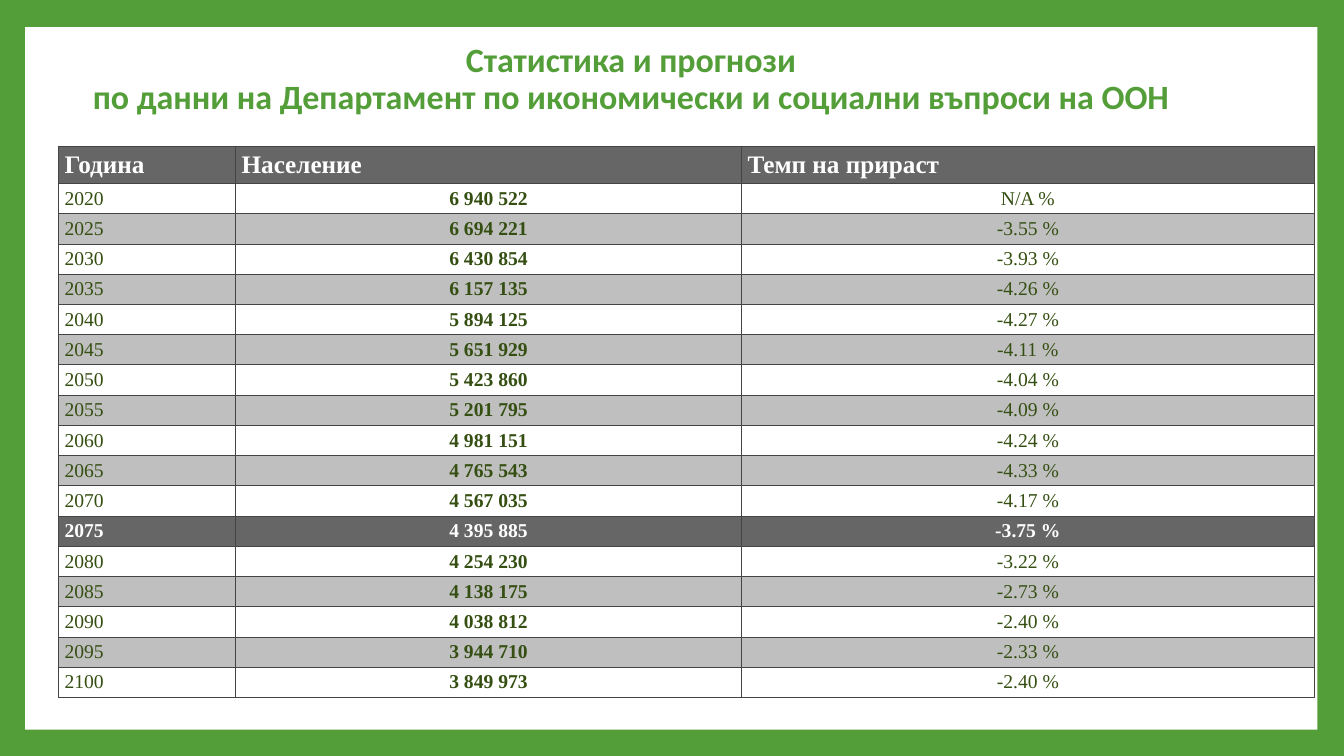
"""Build a slide with a table of population forecasts."""
from dataclasses import dataclass

from lxml import etree
from pptx import Presentation
from pptx.dml.color import RGBColor
from pptx.enum import shapes, text
from pptx.oxml import ns
from pptx.util import Pt


@dataclass(frozen=True)
class Theme:
    green: str = "549E39"
    white: str = "FFFFFF"
    dark: str = "666666"
    band: str = "BFBFBF"
    ink: str = "354F12"
    rule: str = "444444"
    sans: str = "Calibri"
    serif: str = "Times New Roman"
    title: float = 24.3
    head: float = 18
    body: float = 14
    line: float = 0.6


@dataclass(frozen=True)
class Box:
    left: float
    top: float
    width: float
    height: float


@dataclass(frozen=True)
class Look:
    size: float
    color: str
    fill: str
    bold: tuple[bool, ...]
    center: tuple[bool, ...]


@dataclass(frozen=True)
class Row:
    year: str
    people: str
    rate: str


THEME = Theme()
PANEL = Box(18, 19.4, 923, 501.8)
TITLE = Box(41.8, 23.8, 817.9, 60.5)
GRID = Box(41.8, 104.2, 897, 394.4)
COLS = (126.5, 361.4, 409.1)
HEAD_H, ROW_H = 26.8, 21.62
HEADING = "Статистика и прогнози\vпо данни на Департамент по икономически и социални въпроси на ООН"
HEAD = Row("Година", "Население", "Темп на прираст")
PEAK = "2075"
DATA = (
    ("6 940 522", "N/A %"), ("6 694 221", "-3.55 %"), ("6 430 854", "-3.93 %"),
    ("6 157 135", "-4.26 %"), ("5 894 125", "-4.27 %"), ("5 651 929", "-4.11 %"),
    ("5 423 860", "-4.04 %"), ("5 201 795", "-4.09 %"), ("4 981 151", "-4.24 %"),
    ("4 765 543", "-4.33 %"), ("4 567 035", "-4.17 %"), ("4 395 885", "-3.75 %"),
    ("4 254 230", "-3.22 %"), ("4 138 175", "-2.73 %"), ("4 038 812", "-2.40 %"),
    ("3 944 710", "-2.33 %"), ("3 849 973", "-2.40 %"),
)
ROWS = tuple(Row(str(2020 + 5 * i), *pair) for i, pair in enumerate(DATA))

MID = (False, True, True)
TOP_LOOK = Look(THEME.head, THEME.white, THEME.dark, (True,) * 3, (False,) * 3)
PEAK_LOOK = Look(THEME.body, THEME.white, THEME.dark, (True,) * 3, MID)
PLAIN, BAND = (
    Look(THEME.body, THEME.ink, fill, (False, True, False), MID)
    for fill in (THEME.white, THEME.band)
)


def paint(fill, color: str) -> None:
    """Fill with one solid colour."""
    fill.solid()
    fill.fore_color.rgb = RGBColor.from_string(color)


def style(para, name: str, size: float, color: str, bold: bool, center: bool) -> None:
    """Set the font and alignment of a paragraph."""
    font = para.font
    font.name, font.size, font.bold = name, Pt(size), bold
    font.color.rgb = RGBColor.from_string(color)
    para.alignment = text.PP_ALIGN.CENTER if center else text.PP_ALIGN.LEFT


def edge(cell) -> None:
    """Draw the four borders of a cell."""
    props = cell._tc.get_or_add_tcPr()
    for i, side in enumerate(("lnL", "lnR", "lnT", "lnB")):
        line = etree.Element(ns.qn(f"a:{side}"), w=str(Pt(THEME.line)))
        fill = etree.SubElement(line, ns.qn("a:solidFill"))
        etree.SubElement(fill, ns.qn("a:srgbClr"), val=THEME.rule)
        props.insert(i, line)


def add_panel(slide, box: Box) -> None:
    """Put the white panel behind everything else."""
    panel = slide.shapes.add_shape(
        shapes.MSO_SHAPE.RECTANGLE,
        Pt(box.left), Pt(box.top), Pt(box.width), Pt(box.height),
    )
    panel.shadow.inherit = False
    paint(panel.fill, THEME.white)
    panel.line.fill.background()
    slide.shapes.title.element.addprevious(panel.element)


def set_title(slide, box: Box) -> None:
    """Place and format the title."""
    title = slide.shapes.title
    title.left, title.top = Pt(box.left), Pt(box.top)
    title.width, title.height = Pt(box.width), Pt(box.height)
    frame = title.text_frame
    frame.text = HEADING
    frame.word_wrap = True
    frame.auto_size = text.MSO_AUTO_SIZE.NONE
    frame.vertical_anchor = text.MSO_ANCHOR.MIDDLE
    frame.margin_top, frame.margin_bottom = Pt(6), Pt(0)
    para = frame.paragraphs[0]
    para.line_spacing = 0.9
    style(para, THEME.sans, THEME.title, THEME.green, True, True)


def fill_row(cells, row: Row, look: Look) -> None:
    """Write one table row in the given look."""
    words = (row.year, row.people, row.rate)
    for cell, word, bold, center in zip(cells, words, look.bold, look.center):
        cell.text = word
        cell.vertical_anchor = text.MSO_ANCHOR.MIDDLE
        cell.margin_left = cell.margin_right = Pt(4.3)
        cell.margin_top = cell.margin_bottom = Pt(2.2)
        paint(cell.fill, look.fill)
        edge(cell)
        style(cell.text_frame.paragraphs[0], THEME.serif, look.size, look.color, bold, center)


def add_grid(slide, box: Box) -> None:
    """Add the population table."""
    table = slide.shapes.add_table(
        len(ROWS) + 1, len(COLS),
        Pt(box.left), Pt(box.top), Pt(box.width), Pt(box.height),
    ).table
    table.horz_banding = False
    for col, width in zip(table.columns, COLS):
        col.width = Pt(width)
    for i, row in enumerate((HEAD, *ROWS)):
        table.rows[i].height = Pt(ROW_H if i else HEAD_H)
        if i == 0:
            look = TOP_LOOK
        elif row.year == PEAK:
            look = PEAK_LOOK
        else:
            look = PLAIN if i % 2 else BAND
        fill_row(table.rows[i].cells, row, look)


def main() -> None:
    """Build and save the slide."""
    deck = Presentation()
    deck.slide_width, deck.slide_height = Pt(960), Pt(540)
    slide = deck.slides.add_slide(deck.slide_layouts[5])
    paint(slide.background.fill, THEME.green)
    set_title(slide, TITLE)
    add_panel(slide, PANEL)
    add_grid(slide, GRID)
    deck.save("out.pptx")


if __name__ == "__main__":
    main()
